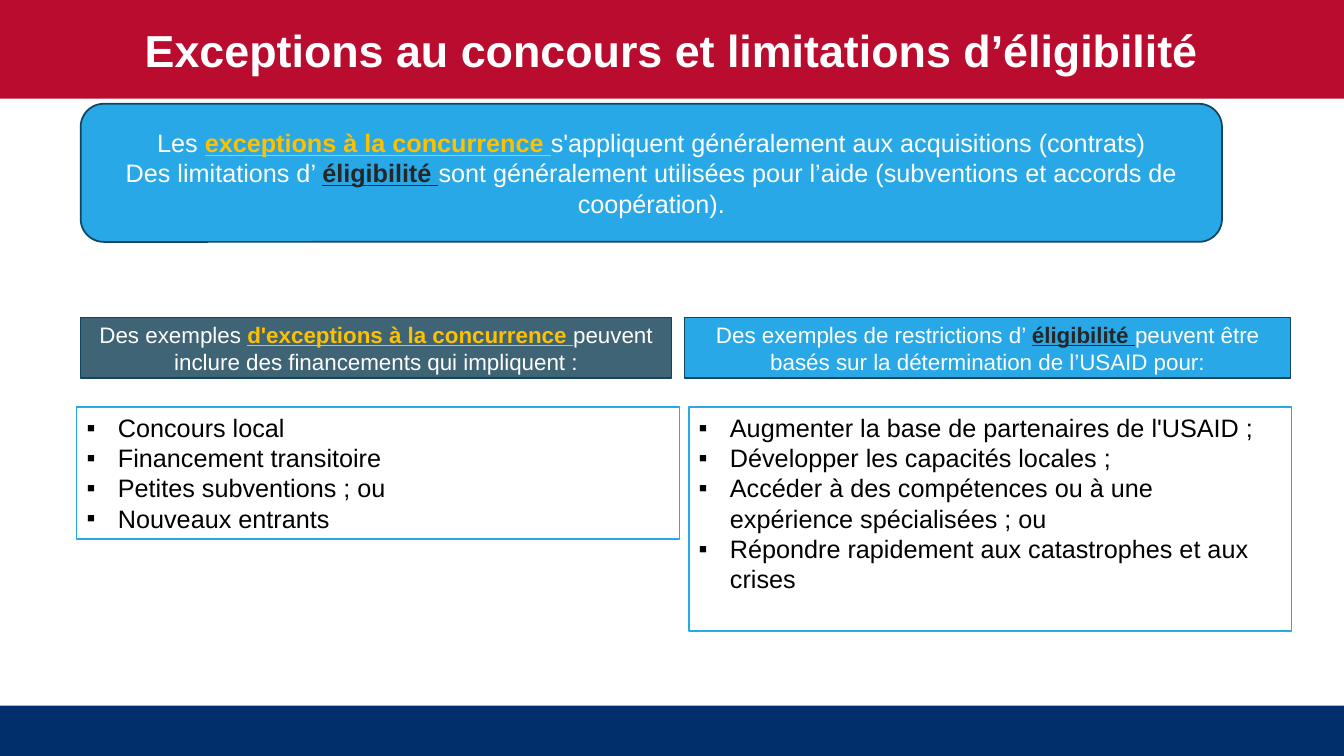
from lxml.etree import SubElement
from pptx import Presentation
from pptx.dml.color import RGBColor
from pptx.enum.shapes import MSO_SHAPE as SHAPE
from pptx.enum.text import MSO_ANCHOR as ANCHOR, MSO_AUTO_SIZE as AUTO, PP_ALIGN as ALIGN
from pptx.oxml.ns import qn
from pptx.util import Inches, Pt

TITLE = "Exceptions au concours et limitations d’éligibilité"
INTRO = [
    [("Les ", "plain"), ("exceptions à la concurrence ", "gold"),
     ("s'appliquent généralement aux acquisitions (contrats)", "plain")],
    [("Des limitations d’ ", "plain"), ("éligibilité ", "dark"),
     ("sont généralement utilisées pour l’aide (subventions et accords de coopération).", "plain")],
]
COLUMNS = [
    {"header": [("Des exemples ", "plain"), ("d'exceptions à la concurrence ", "gold"),
                ("peuvent inclure des financements qui impliquent :", "plain")],
     "header_box": (0.8, 3.15, 5.86, 0.6), "header_fill": "slate",
     "items": ["Concours local", "Financement transitoire",
               "Petites subventions ; ou", "Nouveaux entrants"],
     "list_height": 1.31},
    {"header": [("Des exemples de restrictions d’ ", "plain"), ("éligibilité ", "dark"),
                ("peuvent être basés sur la détermination de l’USAID pour:", "plain")],
     "header_box": (6.79, 3.15, 6.01, 0.6), "header_fill": "sky",
     "items": ["Augmenter la base de partenaires de l'USAID ;",
               "Développer les capacités locales ;",
               "Accéder à des compétences ou à une expérience spécialisées ; ou",
               "Répondre rapidement aux catastrophes et aux crises"],
     "list_height": 2.22},
]
THEME = {
    "font": "Arial",
    "colors": {"red": "BA0C2F", "navy": "002F6C", "sky": "29A8E7", "slate": "3F6475",
               "edge": "114661", "white": "FFFFFF", "black": "000000",
               "gold": "FFC000", "dark": "262626"},
    "sizes": {"title": 32, "body": 18, "header": 16},
    "line": 1.25,
}
STYLES = {
    "title": {"color": "white", "bold": True},
    "plain": {"color": "white", "bold": False, "underline": False},
    "gold": {"color": "gold", "bold": True, "underline": True},
    "dark": {"color": "dark", "bold": True, "underline": True},
    "item": {"color": "black", "bold": False},
}
SLIDE_W, SLIDE_H = 13.33, 7.5
FOOTER_H = 0.5
LIST_LEFT, LIST_TOP, LIST_W, LIST_STEP = 0.76, 4.04, 5.98, 6.07
INDENT = 0.31


def color(name):
    """Return a theme colour."""
    return RGBColor.from_string(THEME["colors"][name])


def place(sp, box, fill, edge=None):
    """Position a shape and set its fill and outline."""
    for name, value in zip(("left", "top", "width", "height"), box):
        setattr(sp, name, Inches(value))
    sp.fill.solid()
    sp.fill.fore_color.rgb = color(fill)
    if edge:
        sp.line.color.rgb = color(edge)
        sp.line.width = Pt(THEME["line"])
    else:
        sp.line.fill.background()


def add_box(slide, kind, box, fill, edge=None):
    """Add a flat shape."""
    sp = slide.shapes.add_shape(kind, 0, 0, 0, 0)
    sp.shadow.inherit = False
    place(sp, box, fill, edge)
    return sp


def write(sp, paragraphs, size, align=ALIGN.CENTER, anchor=ANCHOR.MIDDLE, bullet=None):
    """Fill a shape with paragraphs of styled runs."""
    tf = sp.text_frame
    frame = {"word_wrap": True, "auto_size": AUTO.NONE, "vertical_anchor": anchor,
             "margin_left": Inches(0.1), "margin_right": Inches(0.1),
             "margin_top": Inches(0.05), "margin_bottom": Inches(0.05)}
    for name, value in frame.items():
        setattr(tf, name, value)
    for i, runs in enumerate(paragraphs):
        p = tf.add_paragraph() if i else tf.paragraphs[0]
        if bullet:
            add_bullet(p, bullet)
        for name, value in {"alignment": align, "space_before": Pt(0)}.items():
            setattr(p, name, value)
        for text, style in runs:
            r = p.add_run()
            r.text = text
            look = {"name": THEME["font"], "size": Pt(THEME["sizes"][size]), **STYLES[style]}
            r.font.color.rgb = color(look.pop("color"))
            for name, value in look.items():
                setattr(r.font, name, value)


def add_bullet(p, char):
    """Give a paragraph a hanging bullet."""
    pPr = p._p.get_or_add_pPr()
    pPr.set("marL", str(Inches(INDENT)))
    pPr.set("indent", str(-Inches(INDENT)))
    tint = SubElement(pPr, qn("a:buClr"))
    SubElement(tint, qn("a:srgbClr"), val=THEME["colors"]["black"])
    SubElement(pPr, qn("a:buFont"), typeface=THEME["font"])
    SubElement(pPr, qn("a:buChar"), char=char)


def main():
    """Build the slide."""
    prs = Presentation()
    prs.slide_width, prs.slide_height = Inches(SLIDE_W), Inches(SLIDE_H)
    slide = prs.slides.add_slide(prs.slide_layouts[3])
    title, *lists = slide.placeholders

    add_box(slide, SHAPE.RECTANGLE, (0, SLIDE_H - FOOTER_H, SLIDE_W, FOOTER_H), "navy")
    place(title, (0, 0, SLIDE_W, 0.98), "red")
    write(title, [[(TITLE, "title")]], "title")

    intro = add_box(slide, SHAPE.ROUNDED_RECTANGLE, (0.8, 1.03, 11.32, 1.37), "sky", "edge")
    write(intro, INTRO, "body")

    for i, (col, body) in enumerate(zip(COLUMNS, lists)):
        header = add_box(slide, SHAPE.RECTANGLE, col["header_box"], col["header_fill"], "edge")
        write(header, [col["header"]], "header")
        box = (LIST_LEFT + i * LIST_STEP, LIST_TOP, LIST_W, col["list_height"])
        place(body, box, "white", "sky")
        write(body, [[(item, "item")] for item in col["items"]], "body",
              ALIGN.LEFT, ANCHOR.TOP, "▪")

    prs.save("out.pptx")


if __name__ == "__main__":
    main()
